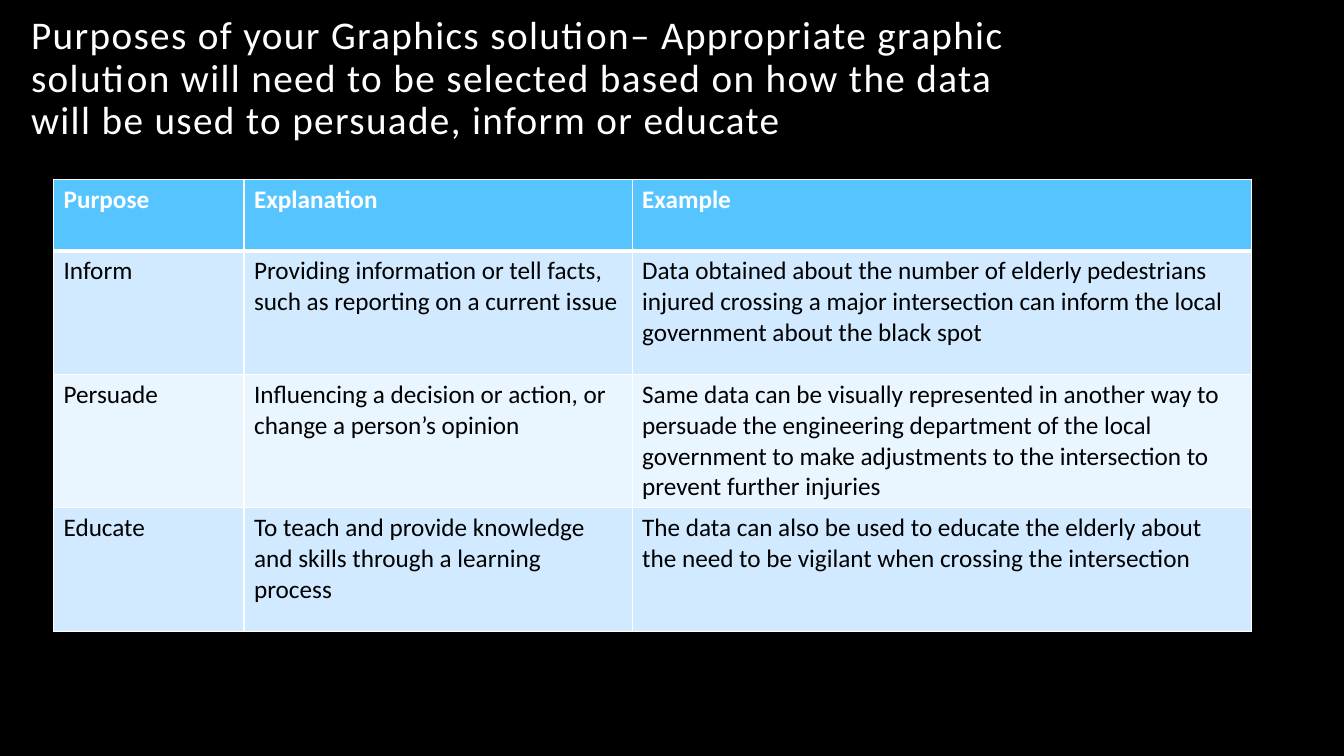
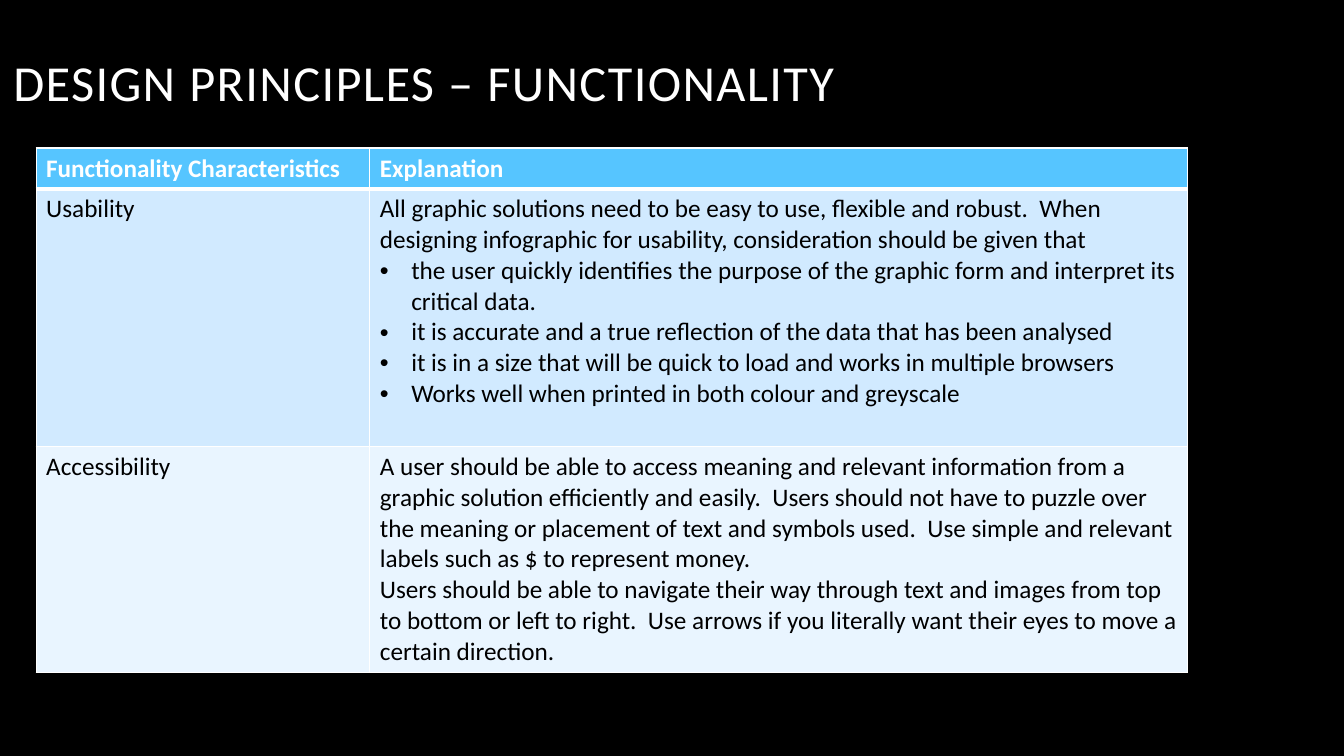
from lxml import etree
from pptx import Presentation
from pptx.dml.color import RGBColor
from pptx.enum.text import MSO_ANCHOR, MSO_AUTO_SIZE, PP_ALIGN
from pptx.oxml.ns import qn
from pptx.util import Cm, Pt

LEFT = PP_ALIGN.LEFT
BOTTOM = MSO_ANCHOR.BOTTOM
NO_FIT = MSO_AUTO_SIZE.NONE

BLACK = RGBColor(0x00, 0x00, 0x00)
WHITE = RGBColor(0xFF, 0xFF, 0xFF)
BLUE = RGBColor(0x56, 0xC5, 0xFF)
BANDS = [RGBColor(0xE9, 0xF5, 0xFF), RGBColor(0xD1, 0xEA, 0xFF)]
FONT = "Calibri"
INDENT = Cm(0.79)
BULLET = "•"

# Content: title, title size and box, table corner, columns, rows, cells
PAGES = [
    {
        "title": "Purposes of your Graphics solution– Appropriate graphic "
                 "solution will need to be selected based on how the data "
                 "will be used to persuade, inform or educate",
        "size": 28,
        "box": (0.53, 0.33, 25.4, 3.4),
        "at": (1.35, 4.52),
        "cols": [4.8, 9.78, 15.6],
        "rows": [1.8, 3.12, 3.12, 3.12],
        "cells": [
            ["Purpose", "Explanation", "Example"],
            ["Inform",
             "Providing information or tell facts, such as reporting on a "
             "current issue",
             "Data obtained about the number of elderly pedestrians injured "
             "crossing a major intersection can inform the local government "
             "about the black spot"],
            ["Persuade",
             "Influencing a decision or action, or change a person’s opinion",
             "Same data can be visually represented in another way to "
             "persuade the engineering department of the local government "
             "to make adjustments to the intersection to prevent further "
             "injuries"],
            ["Educate",
             "To teach and provide knowledge and skills through a learning "
             "process",
             "The data can also be used to educate the elderly about the "
             "need to be vigilant when crossing the intersection"],
        ],
    },
    {
        "title": "DESIGN PRINCIPLES – FUNCTIONALITY",
        "size": 36,
        "box": (0.08, 0.08, 26.92, 2.87),
        "at": (0.91, 3.73),
        "cols": [8.41, 20.6],
        "rows": [1.03, 6.49, 5.7],
        "cells": [
            ["Functionality Characteristics", "Explanation"],
            ["Usability",
             "All graphic solutions need to be easy to use, flexible and "
             "robust.  When designing infographic for usability, "
             "consideration should be given that\n"
             "•the user quickly identifies the purpose of the graphic form "
             "and interpret its critical data.\n"
             "•it is accurate and a true reflection of the data that has "
             "been analysed\n"
             "•it is in a size that will be quick to load and works in "
             "multiple browsers\n"
             "•Works well when printed in both colour and greyscale"],
            ["Accessibility",
             "A user should be able to access meaning and relevant "
             "information from a graphic solution efficiently and easily.  "
             "Users should not have to puzzle over the meaning or placement "
             "of text and symbols used.  Use simple and relevant labels such "
             "as $ to represent money.\n"
             "Users should be able to navigate their way through text and "
             "images from top to bottom or left to right.  Use arrows if you "
             "literally want their eyes to move a certain direction."],
        ],
    },
]


def style(run, size, color, bold=False):
    font = run.font
    font.name, font.size, font.bold = FONT, Pt(size), bold
    font.color.rgb = color


def fill_cell(cell, text, row):
    head = row == 0
    # Borders: a thick line divides the header from the body
    props = cell._tc.get_or_add_tcPr()
    for side in "LRTB":
        thick = (side, row) in (("B", 0), ("T", 1))
        line = etree.SubElement(props, qn(f"a:ln{side}"),
                                w=str(Pt(3 if thick else 1)))
        paint = etree.SubElement(line, qn("a:solidFill"))
        etree.SubElement(paint, qn("a:srgbClr"), val=str(WHITE))
    cell.fill.solid()
    cell.fill.fore_color.rgb = BLUE if head else BANDS[row % 2]
    # Text, with a hanging indent for bulleted lines
    frame = cell.text_frame
    for i, part in enumerate(text.split("\n")):
        para = frame.add_paragraph() if i else frame.paragraphs[0]
        para.text = part.removeprefix(BULLET)
        if part.startswith(BULLET):
            ppr = para._p.get_or_add_pPr()
            ppr.set("marL", str(INDENT))
            ppr.set("indent", str(-INDENT))
            etree.SubElement(ppr, qn("a:buFont"), typeface="Arial")
            etree.SubElement(ppr, qn("a:buChar"), char=BULLET)
        style(para.runs[0], 18, WHITE if head else BLACK, head)


# Deck with a black background on the master
prs = Presentation()
prs.slide_width, prs.slide_height = Cm(33.87), Cm(19.05)
back = prs.slide_master.background.fill
back.solid()
back.fore_color.rgb = BLACK

for page in PAGES:
    slide = prs.slides.add_slide(prs.slide_layouts[5])

    # Title
    title = slide.shapes.title
    title.left, title.top, title.width, title.height = map(Cm, page["box"])
    frame = title.text_frame
    frame.text = page["title"]
    frame.word_wrap = True
    frame.auto_size = NO_FIT
    frame.vertical_anchor = BOTTOM
    para = frame.paragraphs[0]
    para.alignment = LEFT
    para.line_spacing = 0.9
    run = para.runs[0]
    style(run, page["size"], WHITE)
    run.font._element.set("spc", "100")

    # Table
    cols, rows = page["cols"], page["rows"]
    left, top = page["at"]
    table = slide.shapes.add_table(
        len(rows), len(cols), Cm(left), Cm(top),
        Cm(sum(cols)), Cm(sum(rows))).table
    for col, width in zip(table.columns, cols):
        col.width = Cm(width)
    for r, (height, texts) in enumerate(zip(rows, page["cells"])):
        table.rows[r].height = Cm(height)
        for c, text in enumerate(texts):
            fill_cell(table.cell(r, c), text, r)

prs.save("out.pptx")
